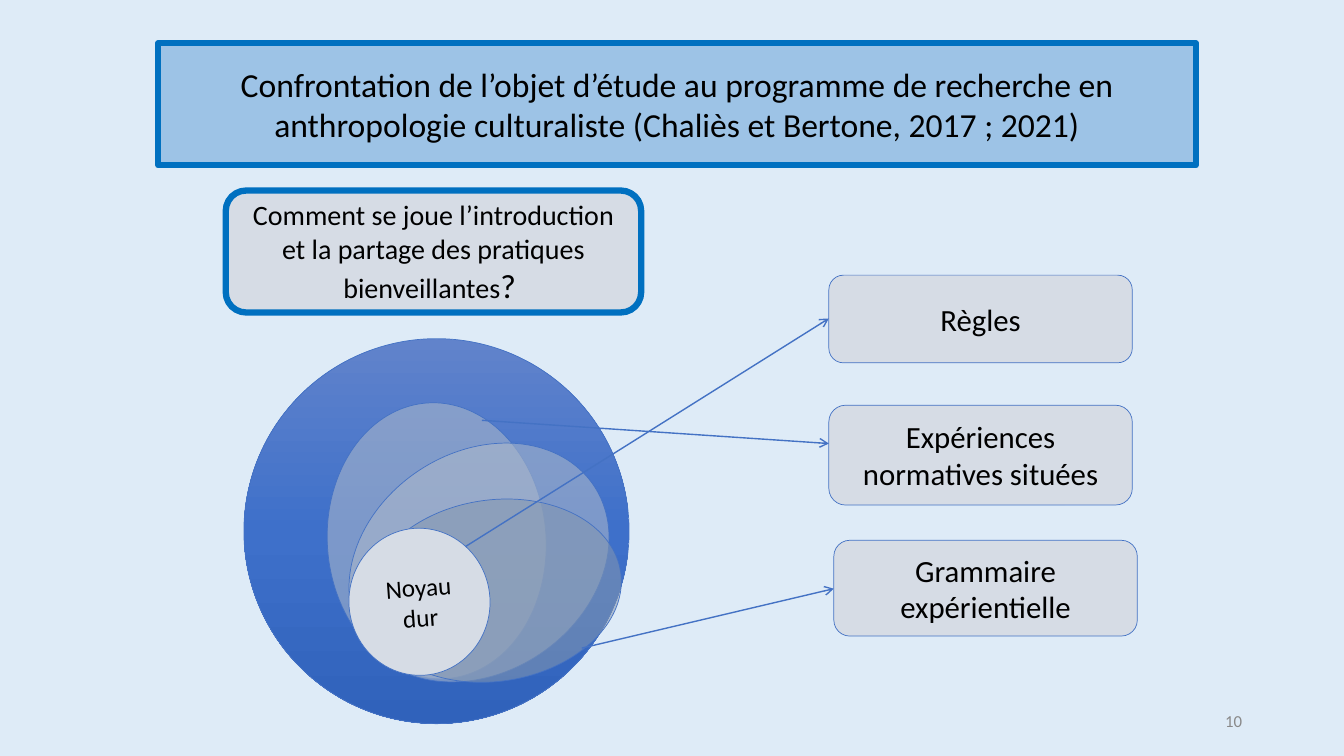
import copy

import lxml.etree
import pptx
import pptx.dml.color
import pptx.enum.dml
import pptx.enum.shapes
import pptx.enum.text
import pptx.oxml
import pptx.oxml.ns
import pptx.util

RGB = pptx.dml.color.RGBColor
SKY = RGB(0xDE, 0xEB, 0xF7)
BLUE = RGB(0x44, 0x72, 0xC4)
EDGE = RGB(0x00, 0x70, 0xC0)
PALE = RGB(0x9D, 0xC3, 0xE6)
MIST = RGB(0xD6, 0xDC, 0xE5)
HAZE = RGB(0xAD, 0xB9, 0xCA)
SLATE = RGB(0x84, 0x97, 0xB0)
GRAY = RGB(0x89, 0x89, 0x89)
BLACK = RGB(0, 0, 0)
DEPTH = [(0, RGB(0x61, 0x83, 0xCB)), (0.5, RGB(0x3E, 0x70, 0xCA)), (1, RGB(0x30, 0x62, 0xBB))]

KIND = pptx.enum.shapes.MSO_SHAPE
ALIGN = pptx.enum.text.PP_ALIGN
qn = pptx.oxml.ns.qn


def write(frame, *parts, size=22, color=BLACK, align=ALIGN.CENTER, font="Calibri"):
    frame.word_wrap = True
    frame.auto_size = pptx.enum.text.MSO_AUTO_SIZE.NONE
    frame.vertical_anchor = pptx.enum.text.MSO_ANCHOR.MIDDLE
    line = frame.paragraphs[0]
    line.alignment = align
    for part in parts:
        text, pt = part if isinstance(part, tuple) else (part, size)
        run = line.add_run()
        run.text = text
        run.font.name = font
        run.font.size = pptx.util.Pt(pt)
        run.font.color.rgb = color


class Board:
    def __init__(self, deck):
        self.wide, self.high = deck.slide_width, deck.slide_height
        self.slide = deck.slides.add_slide(deck.slide_layouts[5])
        self.items = self.slide.shapes
        back = self.slide.background.fill
        back.solid()
        back.fore_color.rgb = SKY

    def place(self, *spot):
        return [round(share * side / 100) for share, side in zip(spot, (self.wide, self.high) * 2)]

    def paint(self, shape, fill, edge=BLUE, width=0.5):
        shape.fill.solid()
        shape.fill.fore_color.rgb = fill
        shape.line.color.rgb = edge
        shape.line.width = pptx.util.Pt(width)

    def shape(self, kind, spot, fill=MIST, turn=0, alpha=None, **line):
        item = self.items.add_shape(kind, *self.place(*spot))
        item.shadow.inherit = False
        item.rotation = turn
        self.paint(item, fill, **line)
        if alpha:
            tint = item.fill._xPr.find(".//" + qn("a:srgbClr"))
            lxml.etree.SubElement(tint, qn("a:alpha")).set("val", str(alpha * 1000))
        return item

    def oval(self, spot, **style):
        return self.shape(KIND.OVAL, spot, **style)

    def box(self, spot, *parts, size=22, **style):
        item = self.shape(KIND.ROUNDED_RECTANGLE, spot, **style)
        write(item.text_frame, *parts, size=size)

    def shade(self, shape, stops):
        shape.fill.gradient()
        shape.fill.gradient_angle = 270
        first = shape.fill._xPr.find(".//" + qn("a:gs"))
        first.addnext(copy.deepcopy(first))
        for stop, (share, color) in zip(shape.fill.gradient_stops, stops):
            stop.position = share
            stop.color.rgb = color

    def title(self, spot, text):
        item = self.items.title
        item.left, item.top, item.width, item.height = self.place(*spot)
        form = lxml.etree.SubElement(item._element.spPr, qn("a:prstGeom"), prst="roundRect")
        lxml.etree.SubElement(form, qn("a:avLst"))
        self.paint(item, PALE, EDGE, 4.5)
        write(item.text_frame, text, size=24)

    def arrow(self, start, end):
        item = self.items.add_connector(
            pptx.enum.shapes.MSO_CONNECTOR.STRAIGHT, *self.place(*start, *end))
        item.line.color.rgb = BLUE
        item.line.width = pptx.util.Pt(1)
        lxml.etree.SubElement(item.line._get_or_add_ln(), qn("a:tailEnd"), type="arrow")
        lxml.etree.SubElement(item._element.spPr, qn("a:effectLst"))

    def label(self, spot, text, **style):
        write(self.items.add_textbox(*self.place(*spot)).text_frame, text, **style)


def main():
    deck = pptx.Presentation()
    deck.slide_width = pptx.util.Inches(13.33)
    deck.slide_height = pptx.util.Inches(7.5)
    board = Board(deck)

    board.title((11.78, 5.73, 77.19, 16.13),
                "Confrontation de l’objet d’étude au programme de recherche en "
                "anthropologie culturaliste (Chaliès et Bertone, 2017 ; 2021)")

    world = board.oval((18.15, 44.8, 28.66, 50.93))
    board.shade(world, DEPTH)
    for spot, turn, fill in [
        ((22.21, 57.07, 20.56, 28.93), 86.1, HAZE),
        ((25.36, 59.87, 20.56, 29.07), 146, HAZE),
        ((27.23, 66.13, 19.05, 24), 171.6, SLATE),
    ]:
        board.oval(spot, turn=turn, fill=fill, alpha=56)
    core = board.oval((25.96, 69.87, 10.5, 19.47), turn=355.8)
    write(core.text_frame, "Noyau dur", size=18)

    for text, left, top, height, start, tip in [
        ("Règles", 61.67, 36.4, 11.6, (34.66, 72.27), 42.13),
        ("Expériences normatives situées", 61.67, 53.6, 13.2, (35.86, 55.6), 58.67),
        ("Grammaire expérientielle", 62.04, 71.47, 12.67, (43.29, 85.73), 77.87),
    ]:
        board.arrow(start, (left, tip))
        board.box((left, top, 22.58, height), text)

    board.box((16.8, 25.2, 30.91, 16.13),
              "Comment se joue l’introduction et la partage des pratiques bienveillantes",
              ("? ", 24), size=20, edge=EDGE, width=4.5)
    board.label((70.67, 92.67, 22.5, 5.33), "10", size=12, color=GRAY, align=ALIGN.RIGHT)

    deck.save("out.pptx")


if __name__ == "__main__":
    main()
